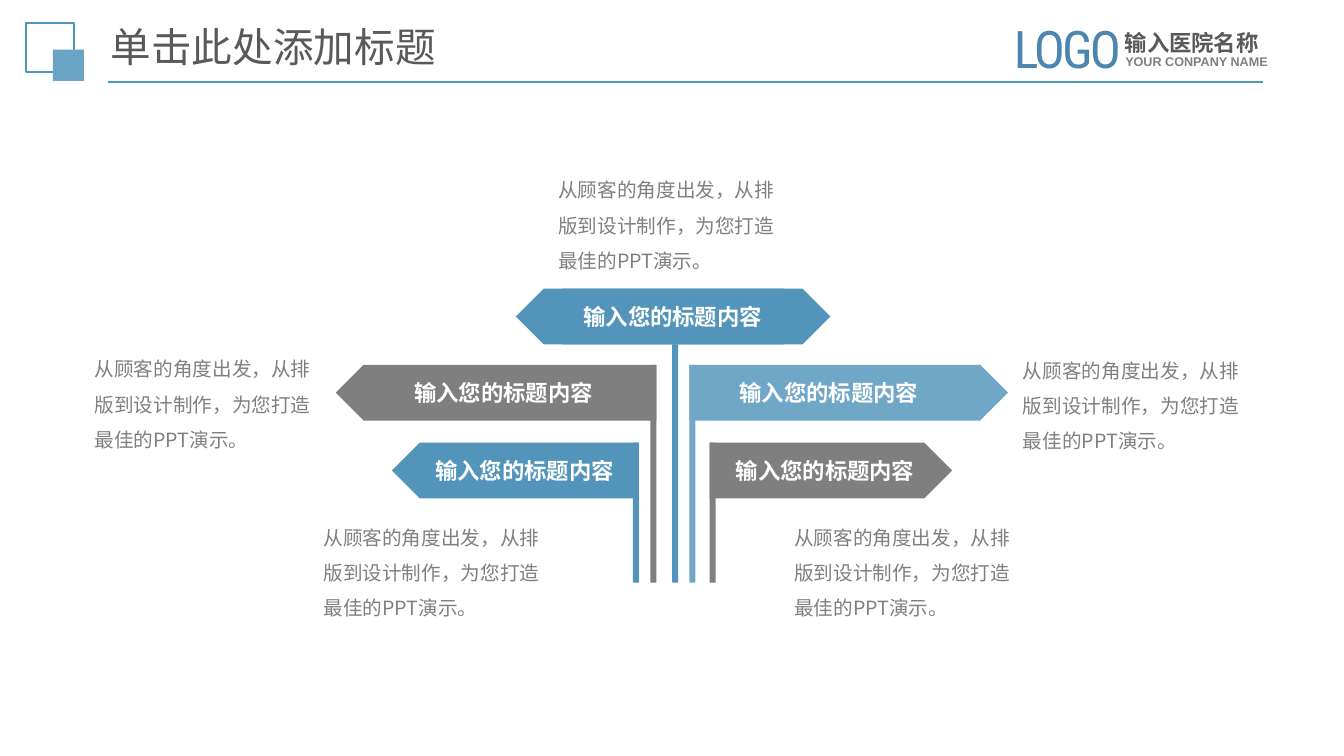
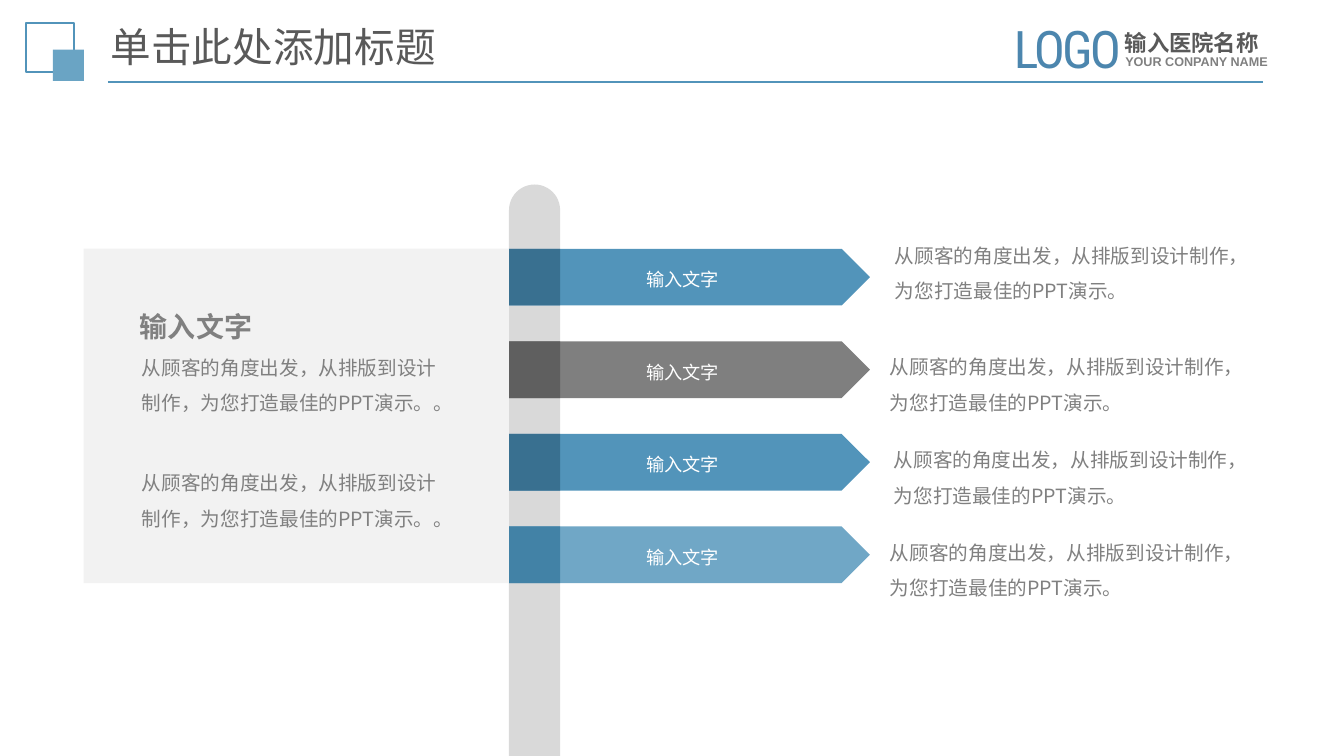
from dataclasses import dataclass
from typing import Optional

import pptx
import pptx.dml.color
import pptx.enum.shapes
import pptx.enum.text
import pptx.oxml.ns
import pptx.util
from lxml import etree

Pt = pptx.util.Pt
RGB = pptx.dml.color.RGBColor
Shape = pptx.enum.shapes.MSO_SHAPE
Align = pptx.enum.text.PP_ALIGN
Anchor = pptx.enum.text.MSO_ANCHOR
qn = pptx.oxml.ns.qn


@dataclass(frozen=True)
class Theme:
    blue: str = "5294BA"
    dark_blue: str = "397090"
    light_blue: str = "70A7C6"
    mid_blue: str = "4282A6"
    square_blue: str = "6AA4C4"
    logo_blue: str = "4C86AE"
    gray: str = "7F7F7F"
    dark_gray: str = "5F5F5F"
    pole_gray: str = "D9D9D9"
    panel_gray: str = "F2F2F2"
    title_gray: str = "595959"
    text_gray: str = "808080"
    white: str = "FFFFFF"
    cjk: str = "Noto Sans CJK SC"
    title_size: float = 29
    logo_size: float = 37
    heading_size: float = 20
    label_size: float = 16
    body_size: float = 14
    arrow_size: float = 13
    small_size: float = 9


THEME = Theme()
BODY = "从顾客的角度出发，从排版到设计制作，为您打造最佳的PPT演示。"


@dataclass(frozen=True)
class Style:
    size: float
    color: str
    font: str
    bold: bool = False
    spacing: Optional[float] = None
    align: Optional[Align] = None
    tracking: int = 0  # hundredths of a point


TITLE = Style(THEME.title_size, THEME.title_gray, THEME.cjk, spacing=0.9)
HOSPITAL = Style(THEME.label_size, THEME.title_gray, "Calibri", bold=True)
COMPANY = Style(THEME.small_size, THEME.text_gray, "Arial", bold=True)
LOGO = Style(THEME.logo_size, THEME.logo_blue, "Roboto Condensed", tracking=-200)
NOTE = Style(THEME.body_size, THEME.text_gray, THEME.cjk, spacing=1.5)
SIGN_LABEL = Style(THEME.label_size, THEME.white, "Calibri", bold=True, align=Align.CENTER)
ARROW_LABEL = Style(THEME.arrow_size, THEME.white, "Arial", spacing=1.2, align=Align.CENTER)
HEADING = Style(THEME.heading_size, THEME.text_gray, "Arial", bold=True, spacing=1.2)


@dataclass(frozen=True)
class Sign:
    left: float
    top: float
    width: float
    label_left: float
    color: str
    points_left: bool


@dataclass(frozen=True)
class Arrow:
    color: str
    fold_color: str
    note_left: float
    note_top: float


# Drawing helpers
def write(frame, text: str, style: Style) -> None:
    paragraph = frame.paragraphs[0]
    paragraph.add_run().text = text
    if style.spacing is not None:
        paragraph.line_spacing = style.spacing
    if style.align is not None:
        paragraph.alignment = style.align
    font = paragraph.font
    font.size = Pt(style.size)
    font.bold = style.bold
    font.color.rgb = RGB.from_string(style.color)
    font.name = style.font
    defaults = paragraph._p.pPr.find(qn("a:defRPr"))
    etree.SubElement(defaults, qn("a:ea")).set("typeface", THEME.cjk)
    if style.tracking:
        defaults.set("spc", str(style.tracking))


def add_text(slide, text: str, style: Style, left: float, top: float,
             width: float, height: float, anchor: Anchor = Anchor.TOP):
    frame = slide.shapes.add_textbox(Pt(left), Pt(top), Pt(width), Pt(height)).text_frame
    frame.word_wrap = True
    frame.vertical_anchor = anchor
    write(frame, text, style)
    return frame


def add_block(slide, kind: Shape, color: Optional[str], left: float, top: float,
              width: float, height: float, mirrored: bool = False):
    block = slide.shapes.add_shape(kind, Pt(left), Pt(top), Pt(width), Pt(height))
    block.shadow.inherit = False
    block.line.fill.background()
    if color is None:
        block.fill.background()
    else:
        block.fill.solid()
        block.fill.fore_color.rgb = RGB.from_string(color)
    if mirrored:
        block._element.spPr.find(qn("a:xfrm")).set("flipH", "1")
    return block


def add_header(slide) -> None:
    add_text(slide, "单击此处添加标题", TITLE, 72, 18, 619, 34.6, Anchor.MIDDLE)
    rule = slide.shapes.add_connector(
        pptx.enum.shapes.MSO_CONNECTOR.STRAIGHT, Pt(77), Pt(58.7), Pt(902.2), Pt(58.7))
    etree.SubElement(rule._element.spPr, qn("a:effectLst"))
    outline = add_block(slide, Shape.RECTANGLE, None, 18.3, 16.4, 34.7, 35.2)
    for line, weight in ((rule.line, 1.25), (outline.line, 1.5)):
        line.color.rgb = RGB.from_string(THEME.blue)
        line.width = Pt(weight)
    add_block(slide, Shape.RECTANGLE, THEME.square_blue, 37.8, 35.4, 22.2, 22.4)
    add_text(slide, "输入医院名称", HOSPITAL, 796.3, 17.3, 126, 26.6)
    add_text(slide, "YOUR CONPANY NAME", COMPANY, 796.7, 35.3, 139, 18)
    add_text(slide, "LOGO", LOGO, 717.1, 8.6, 101.5, 51.8)


# Signpost slide
SIGN_HEIGHT = 39.8
POST_WIDTH = 4.3
POST_BOTTOM = 416.2
TOP_SIGN_Y, MIDDLE_SIGN_Y, LOW_SIGN_Y = 206.2, 260.6, 316.2
SIGNS = (
    Sign(239.8, MIDDLE_SIGN_Y, 229, 294.5, THEME.gray, True),
    Sign(492.5, MIDDLE_SIGN_Y, 227.5, 527, THEME.light_blue, False),
    Sign(506.9, LOW_SIGN_Y, 173.2, 524.2, THEME.gray, False),
    Sign(280, LOW_SIGN_Y, 176.4, 309.6, THEME.blue, True),
)
SIGN_NOTES = ((560.2, 363.6), (60.5, 243.2), (723.6, 244.2), (223.9, 363.6), (391.7, 115.4))


def add_sign_label(slide, left: float, sign_top: float) -> None:
    frame = add_text(slide, "输入您的标题内容", SIGN_LABEL, left, sign_top + 10.2,
                     130.3, 19.4, Anchor.MIDDLE)
    frame.word_wrap = False
    frame.margin_left = frame.margin_right = frame.margin_top = frame.margin_bottom = 0


def add_post(slide, color: str, left: float, top: float) -> None:
    add_block(slide, Shape.RECTANGLE, color, left, top, POST_WIDTH, POST_BOTTOM - top)


def build_signpost(slide) -> None:
    add_header(slide)
    # Each post runs down from the inner edge of its sign
    for sign in SIGNS:
        inner_edge = sign.left + sign.width - POST_WIDTH if sign.points_left else sign.left
        add_post(slide, sign.color, inner_edge, sign.top)
    add_post(slide, THEME.blue, 480.1, TOP_SIGN_Y + SIGN_HEIGHT)
    for sign in SIGNS:
        add_block(slide, Shape.PENTAGON, sign.color, sign.left, sign.top,
                  sign.width, SIGN_HEIGHT, sign.points_left)
        add_sign_label(slide, sign.label_left, sign.top)
    # The top sign points both ways
    for left, mirrored in ((368.6, True), (401.7, False)):
        add_block(slide, Shape.PENTAGON, THEME.blue, left, TOP_SIGN_Y,
                  191.5, SIGN_HEIGHT, mirrored)
    add_sign_label(slide, 415.4, TOP_SIGN_Y)
    for left, top in SIGN_NOTES:
        add_text(slide, BODY, NOTE, left, top, 176.4, 83.5)


# Pole slide
POLE_LEFT, POLE_WIDTH, POLE_TOP = 363.6, 36.5, 131.8
ARROWS_TOP, ARROW_PITCH, ARROW_WIDTH, ARROW_HEIGHT = 177.7, 66.1, 257.8, 40.5
ARROWS = (
    Arrow(THEME.blue, THEME.dark_blue, 632.2, 162),
    Arrow(THEME.gray, THEME.dark_gray, 628.6, 241.9),
    Arrow(THEME.blue, THEME.dark_blue, 631.4, 308.2),
    Arrow(THEME.light_blue, THEME.mid_blue, 628.6, 374.4),
)


def build_pole(slide, slide_height: float) -> None:
    add_header(slide)
    pole = add_block(slide, Shape.ROUND_2_SAME_RECTANGLE, THEME.pole_gray, POLE_LEFT,
                     POLE_TOP, POLE_WIDTH, slide_height - POLE_TOP)
    pole.adjustments[0] = 0.5
    # Arrows folded round the pole
    for row, arrow in enumerate(ARROWS):
        top = ARROWS_TOP + row * ARROW_PITCH
        band = add_block(slide, Shape.PENTAGON, arrow.color, POLE_LEFT, top,
                         ARROW_WIDTH, ARROW_HEIGHT)
        band.text_frame.vertical_anchor = Anchor.MIDDLE
        write(band.text_frame, "输入文字", ARROW_LABEL)
        add_block(slide, Shape.RECTANGLE, arrow.fold_color, POLE_LEFT, top,
                  POLE_WIDTH, ARROW_HEIGHT)
        add_text(slide, BODY, NOTE, arrow.note_left, arrow.note_top, 256.3, 58.3)
    # Summary panel
    panel_left = 59.8
    add_block(slide, Shape.RECTANGLE, THEME.panel_gray, panel_left, ARROWS_TOP,
              POLE_LEFT - panel_left, 3 * ARROW_PITCH + ARROW_HEIGHT)
    add_text(slide, "输入文字", HEADING, 92.9, 213.1, 114.5, 33.8)
    for top in (242.3, 324.7):
        add_text(slide, BODY + "。", NOTE, 94.3, top, 236.9, 58.3)


def main() -> None:
    deck = pptx.Presentation()
    width, height = 960, 540
    deck.slide_width, deck.slide_height = Pt(width), Pt(height)
    blank = deck.slide_layouts[6]
    build_signpost(deck.slides.add_slide(blank))
    build_pole(deck.slides.add_slide(blank), height)
    deck.save("out.pptx")


if __name__ == "__main__":
    main()
